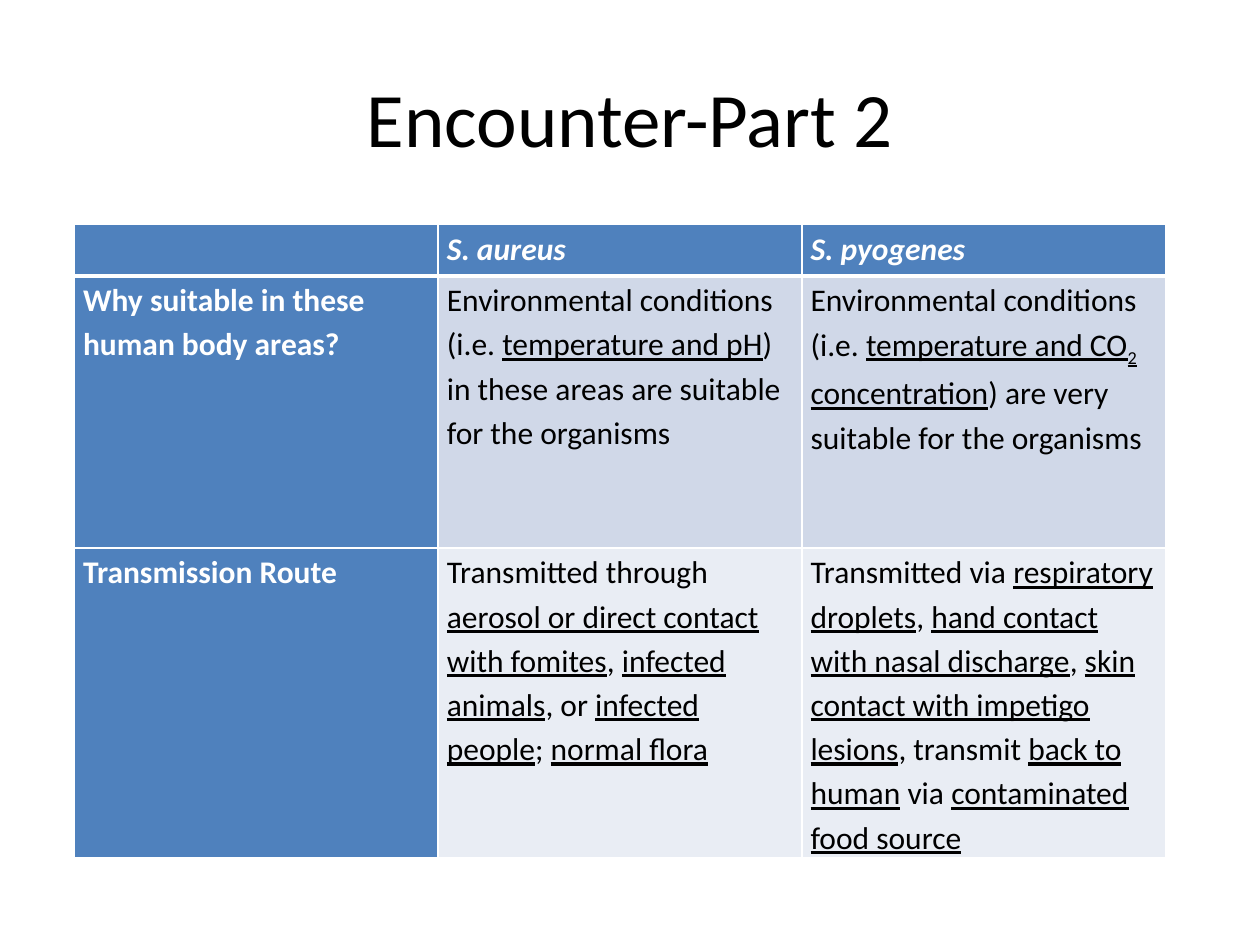
from lxml.etree import SubElement
from pptx import Presentation
from pptx.dml.color import RGBColor
from pptx.enum.text import MSO_ANCHOR, PP_ALIGN
from pptx.oxml.ns import qn
from pptx.util import Inches, Pt

BLUE = RGBColor(0x4F, 0x81, 0xBD)
BAND_DARK = RGBColor(0xD0, 0xD8, 0xE8)
BAND_LIGHT = RGBColor(0xE9, 0xED, 0xF4)
WHITE = RGBColor(0xFF, 0xFF, 0xFF)
BLACK = RGBColor(0x00, 0x00, 0x00)
FONT = "Calibri"

# Underscores enclose underlined words, tildes enclose a subscript
ROWS = [
    ["", "S. aureus", "S. pyogenes"],
    [
        "Why suitable in these human body areas?",
        "Environmental conditions (i.e. _temperature and pH_) in these areas "
        "are suitable for the organisms",
        "Environmental conditions (i.e. _temperature and CO~2 ~concentration_) "
        "are very suitable for the organisms",
    ],
    [
        "Transmission Route",
        "Transmitted through _aerosol or direct contact with fomites_, "
        "_infected animals_, or _infected people_; _normal flora_",
        "Transmitted via _respiratory droplets_, _hand contact with nasal discharge_, "
        "_skin contact with impetigo lesions_, transmit _back to human_ via "
        "_contaminated food source_",
    ],
]
ROW_HEIGHTS = [Inches(0.41), Inches(2.16), Inches(2.16)]
BODY_FILLS = [BAND_DARK, BAND_LIGHT]


def add_title(page, text, left, top, width, height):
    title = page.shapes.title
    title.left, title.top, title.width, title.height = left, top, width, height
    title.text_frame.vertical_anchor = MSO_ANCHOR.MIDDLE
    title.text_frame.text = text
    para = title.text_frame.paragraphs[0]
    para.alignment = PP_ALIGN.CENTER
    para.font.name, para.font.size = FONT, Pt(44)
    para.font.color.rgb = BLACK


def write_marked_text(para, text):
    for index, part in enumerate(text.split("_")):
        for level, piece in enumerate(part.split("~")):
            if not piece:
                continue
            span = para.add_run()
            span.text = piece
            if index % 2:
                span.font.underline = True
            if level % 2:
                span.font._element.set("baseline", "-25000")


def set_border(cell, side, width):
    line = SubElement(cell._tc.get_or_add_tcPr(), qn(f"a:{side}"), w=str(width))
    fill = SubElement(line, qn("a:solidFill"))
    SubElement(fill, qn("a:srgbClr"), val=str(WHITE))


def format_cell(cell, text, row, column):
    is_header = row == 0
    is_heading = is_header or column == 0

    # Borders come before the fill in the cell properties
    for side in ("lnL", "lnR", "lnT", "lnB"):
        thick = is_header and side == "lnB" or row == 1 and side == "lnT"
        set_border(cell, side, Pt(3 if thick else 1))
    cell.fill.solid()
    cell.fill.fore_color.rgb = BLUE if is_heading else BODY_FILLS[row - 1]

    # Text
    cell.margin_left = cell.margin_right = Inches(0.07)
    cell.margin_top = cell.margin_bottom = 0
    para = cell.text_frame.paragraphs[0]
    para.line_spacing = 1.15
    para.font.name, para.font.size = FONT, Pt(18)
    para.font.bold, para.font.italic = is_heading, is_header
    para.font.color.rgb = WHITE if is_heading else BLACK
    write_marked_text(para, text)


def add_comparison_table(page, left, top, width):
    table = page.shapes.add_table(
        len(ROWS), len(ROWS[0]), left, top, width, sum(ROW_HEIGHTS)
    ).table
    for row, texts in enumerate(ROWS):
        table.rows[row].height = ROW_HEIGHTS[row]
        for column, text in enumerate(texts):
            format_cell(table.cell(row, column), text, row, column)


def main():
    deck = Presentation()
    deck.slide_width, deck.slide_height = Inches(10), Inches(7.5)
    page = deck.slides.add_slide(deck.slide_layouts[5])
    add_title(page, "Encounter-Part 2", Inches(0.5), Inches(0.3), Inches(9), Inches(1.25))
    add_comparison_table(page, Inches(0.59), Inches(1.78), Inches(8.66))
    deck.save("out.pptx")


if __name__ == "__main__":
    main()
